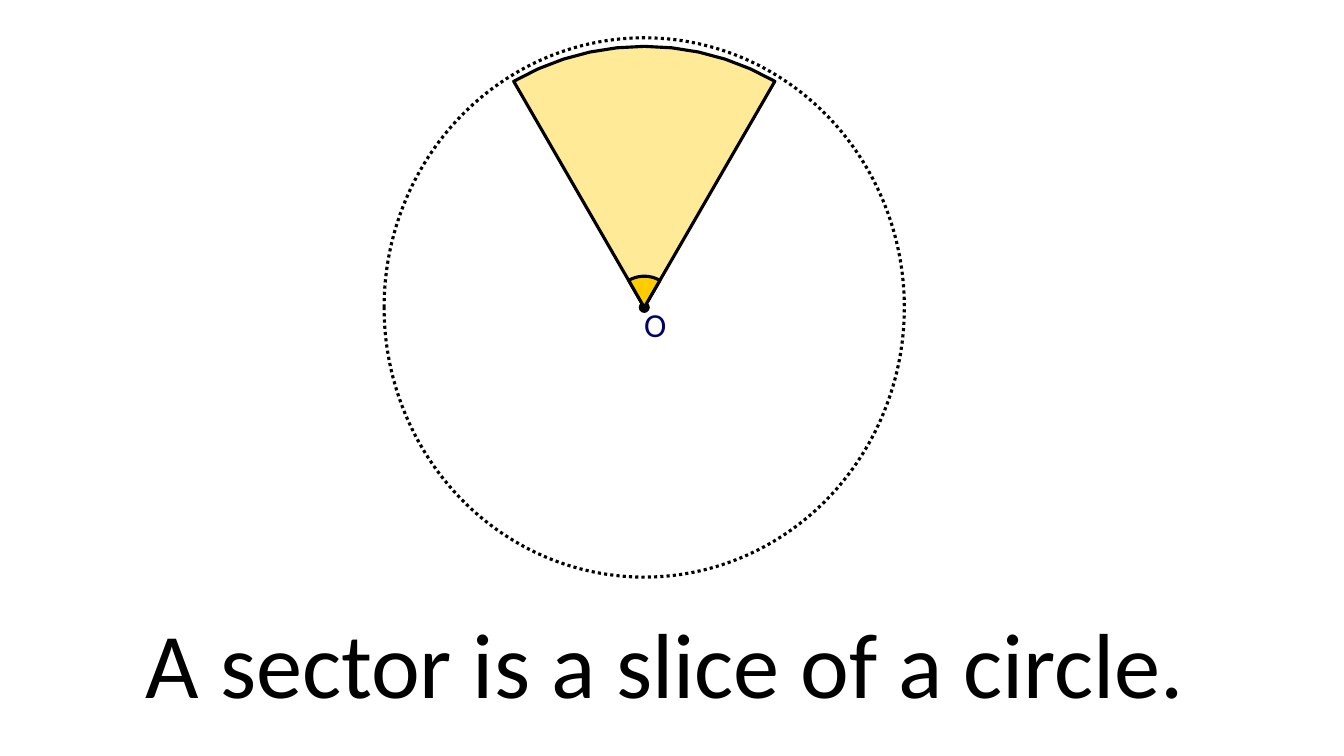
from math import cos, radians, sin

from pptx import Presentation
from pptx.dml.color import RGBColor
from pptx.enum.dml import MSO_LINE
from pptx.enum.shapes import MSO_SHAPE
from pptx.enum.text import PP_ALIGN
from pptx.util import Inches, Pt

DOTTED = MSO_LINE.ROUND_DOT
OVAL = MSO_SHAPE.OVAL
LEFT, CENTER = PP_ALIGN.LEFT, PP_ALIGN.CENTER

# Content
CAPTION = "A sector is a slice of a circle."
CENTRE_LABEL = "O"
FONT = "Calibri"
COLORS = {
    "black": "000000",
    "sector": "FFEB97",
    "angle": "FFCC00",
    "label": "010066",
}

# Geometry in inches, angles in degrees
SLIDE_W, SLIDE_H = 13.33, 7.5
CX, CY = 6.39, 3.05
CIRCLE_W, CIRCLE_H = 5.16, 5.35
DOT = 0.11
START, END, STEP = 60, 120, 6
SECTOR_R, ANGLE_R = 2.59, 0.31

prs = Presentation()
prs.slide_width, prs.slide_height = Inches(SLIDE_W), Inches(SLIDE_H)
s = prs.slides.add_slide(prs.slide_layouts[6])


def style(sp, fill=None, outlined=True):
    sp.shadow.inherit = False
    if fill:
        sp.fill.solid()
        sp.fill.fore_color.rgb = RGBColor.from_string(COLORS[fill])
    else:
        sp.fill.background()
    if outlined:
        sp.line.color.rgb = RGBColor.from_string(COLORS["black"])
        sp.line.width = Pt(2.25)
    else:
        sp.line.fill.background()
    return sp


def add_slice(radius, fill):
    arc = [(Inches(CX + radius * cos(radians(a))),
            Inches(CY - radius * sin(radians(a))))
           for a in range(START, END + 1, STEP)]
    builder = s.shapes.build_freeform(Inches(CX), Inches(CY))
    builder.add_line_segments(arc, close=True)
    return style(builder.convert_to_shape(), fill)


def add_oval(w, h, **look):
    sp = s.shapes.add_shape(OVAL, Inches(CX - w / 2), Inches(CY - h / 2),
                            Inches(w), Inches(h))
    return style(sp, **look)


def add_text(text, x, y, w, h, size, color, align):
    tf = s.shapes.add_textbox(Inches(x), Inches(y), Inches(w), Inches(h)).text_frame
    tf.word_wrap = True
    p = tf.paragraphs[0]
    p.alignment = align
    r = p.add_run()
    r.text = text
    r.font.name, r.font.size = FONT, Pt(size)
    r.font.color.rgb = RGBColor.from_string(COLORS[color])


# Circle with its sector, centre and angle
add_slice(SECTOR_R, "sector")
add_oval(CIRCLE_W, CIRCLE_H).line.dash_style = DOTTED
add_oval(DOT, DOT, fill="black", outlined=False)
add_slice(ANGLE_R, "angle")
add_text(CENTRE_LABEL, CX - 0.1, CY - 0.08, 0.75, 0.79, 24, "label", LEFT)

# Caption
add_text(CAPTION, 0.92, 5.96, 11.36, 1.21, 66, "black", CENTER)

prs.save("out.pptx")
